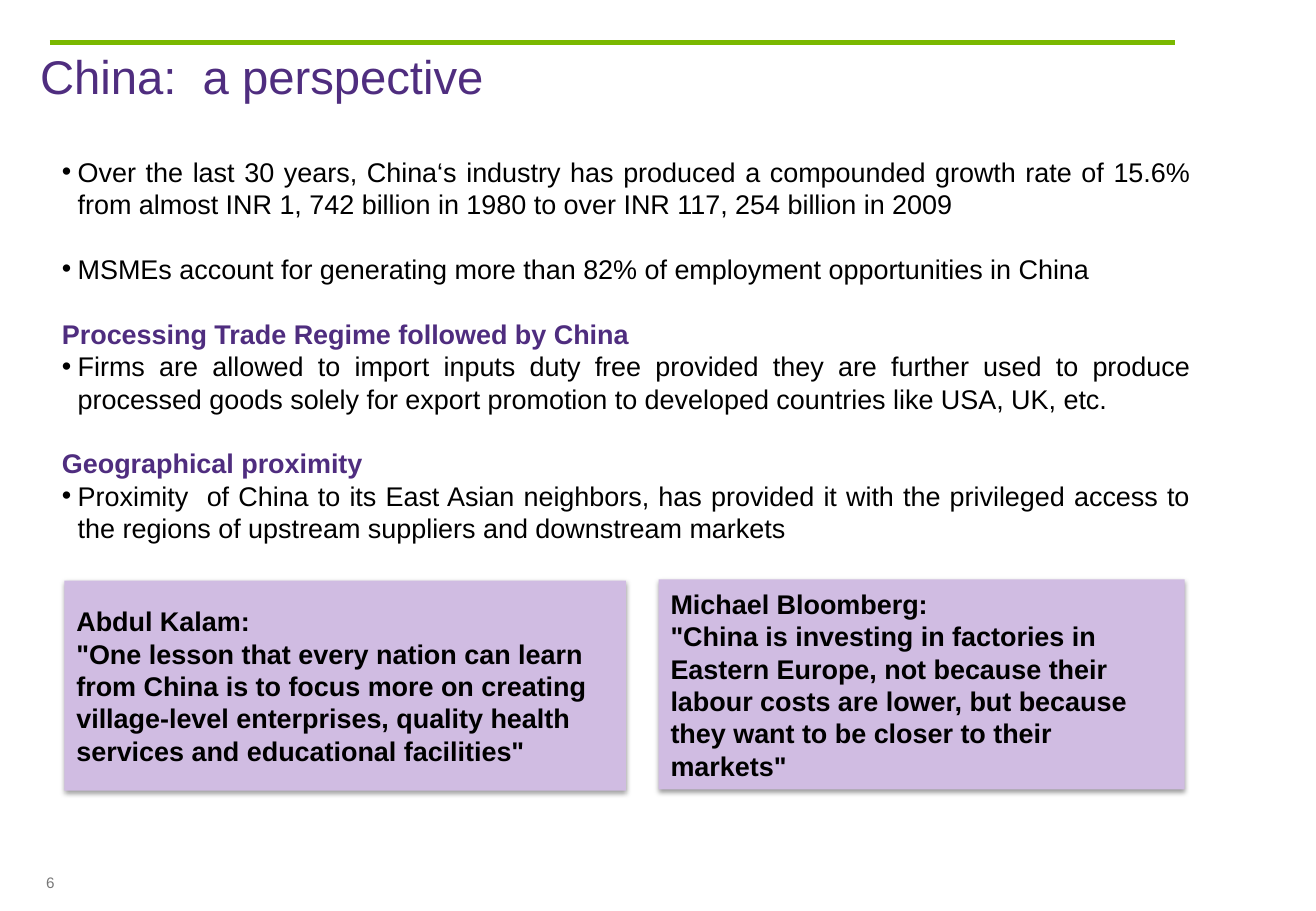
"""Build the slide "China: a perspective"."""
from lxml import etree
from pptx import Presentation
from pptx import util as u
from pptx.dml.color import RGBColor
from pptx.enum import shapes, text
from pptx.oxml import ns

COLORS = {"purple": "4F2D7F", "green": "7AB800", "lilac": "D0BCE2",
          "black": "000000", "gray": "777777", "white": "FFFFFF"}
TITLE = "China:  a perspective"
PAGE = "6"
BODY = [
    ("bullet", False, "Over the last 30 years, China‘s industry has produced a compounded growth rate of 15.6% "
                      "from almost INR 1, 742 billion in 1980 to over INR 117, 254 billion in 2009"),
    ("bullet", True, "MSMEs account for generating more than 82% of employment opportunities in China"),
    ("heading", True, "Processing Trade Regime followed by China"),
    ("bullet", False, "Firms are allowed to import inputs duty free provided they are further used to produce "
                      "processed goods solely for export promotion to developed countries like USA, UK, etc."),
    ("heading", True, "Geographical proximity"),
    ("bullet", False, "Proximity  of China to its East Asian neighbors, has provided it with the privileged "
                      "access to the regions of upstream suppliers and downstream markets"),
]
QUOTES = [
    ((542, 477, 433, 173), "Michael Bloomberg:",
     '"China is investing in factories in Eastern Europe, not because their labour costs are lower, '
     'but because they want to be closer to their markets"'),
    ((53, 478, 462, 173), "Abdul Kalam:",
     '"One lesson that every nation can learn from China is to focus more on creating village-level '
     'enterprises, quality health services and educational facilities"'),
]
PX = 9144
LINE = u.Pt(19.2)


def px(*values):
    return [u.Emu(v * PX) for v in values]


def rgb(name):
    return RGBColor.from_string(COLORS[name])


def style(p, size, color, bold=False, align=text.PP_ALIGN.LEFT):
    p.alignment = align
    p.font.name, p.font.size, p.font.bold = "Arial", u.Pt(size), bold
    p.font.color.rgb = rgb(color)


def add(parent, tag, **attrs):
    return etree.SubElement(parent, ns.qn(tag), attrs)


def place(sp, *box):
    sp.left, sp.top, sp.width, sp.height = px(*box)
    sp.text_frame.word_wrap = True
    sp.text_frame.auto_size = text.MSO_AUTO_SIZE.NONE


def add_title(s):
    sp = s.shapes.title
    place(sp, 23, 34, 990, 57)
    sp.text_frame.vertical_anchor = text.MSO_ANCHOR.MIDDLE
    sp.text_frame.text = TITLE
    style(sp.text_frame.paragraphs[0], 28, "purple")


def add_rule(s):
    line = s.shapes.add_connector(shapes.MSO_CONNECTOR.STRAIGHT, *px(41, 35, 967, 35))
    line.line.color.rgb, line.line.width = rgb("green"), u.Pt(3.5)
    add(line._element.spPr, "a:effectLst")


def add_body(s):
    sp = s.placeholders[1]
    place(sp, 41, 123, 949, 451)
    tf = sp.text_frame
    tf.vertical_anchor = text.MSO_ANCHOR.TOP
    for i, (kind, gap, words) in enumerate(BODY):
        p = tf.add_paragraph() if i else tf.paragraphs[0]
        p.text = words
        pPr = p._p.get_or_add_pPr()
        if kind == "bullet":
            indent = 13 * PX
            add(pPr, "a:buFont", typeface="Arial")
            add(pPr, "a:buChar", char="•")
            style(p, 16, "black", align=text.PP_ALIGN.JUSTIFY)
        else:
            indent = 0
            add(pPr, "a:buNone")
            style(p, 16, "purple", bold=True)
        pPr.set("marL", str(indent))
        pPr.set("indent", str(-indent))
        p.line_spacing = LINE
        p.space_before = LINE if gap else u.Pt(0)


def add_quote(s, box, speaker, quote):
    sp = s.shapes.add_shape(shapes.MSO_SHAPE.RECTANGLE, *px(*box))
    sp.fill.solid()
    sp.fill.fore_color.rgb = rgb("lilac")
    sp.line.fill.background()
    sp.shadow.inherit = False
    effects = sp._element.spPr.find(ns.qn("a:effectLst"))
    shadow = add(effects, "a:outerShdw", blurRad="40000", dist="20000", dir="5400000", rotWithShape="0")
    add(add(shadow, "a:srgbClr", val=COLORS["black"]), "a:alpha", val="38000")
    tf = sp.text_frame
    tf.word_wrap, tf.vertical_anchor = True, text.MSO_ANCHOR.MIDDLE
    tf.text = f"{speaker}\n{quote}"
    for p in tf.paragraphs:
        style(p, 16, "black", bold=True)
        p.line_spacing = LINE


def add_page_number(s):
    tf = s.shapes.add_textbox(*px(38, 719, 15, 15)).text_frame
    tf.margin_left = tf.margin_top = tf.margin_right = tf.margin_bottom = 0
    tf.word_wrap = False
    tf.text = PAGE
    style(tf.paragraphs[0], 9, "gray")


def main():
    prs = Presentation()
    prs.slide_width, prs.slide_height = px(1083, 750)
    s = prs.slides.add_slide(prs.slide_layouts[1])
    s.background.fill.solid()
    s.background.fill.fore_color.rgb = rgb("white")
    add_title(s)
    add_rule(s)
    add_body(s)
    for box, speaker, quote in QUOTES:
        add_quote(s, box, speaker, quote)
    add_page_number(s)
    prs.save("out.pptx")


if __name__ == "__main__":
    main()
